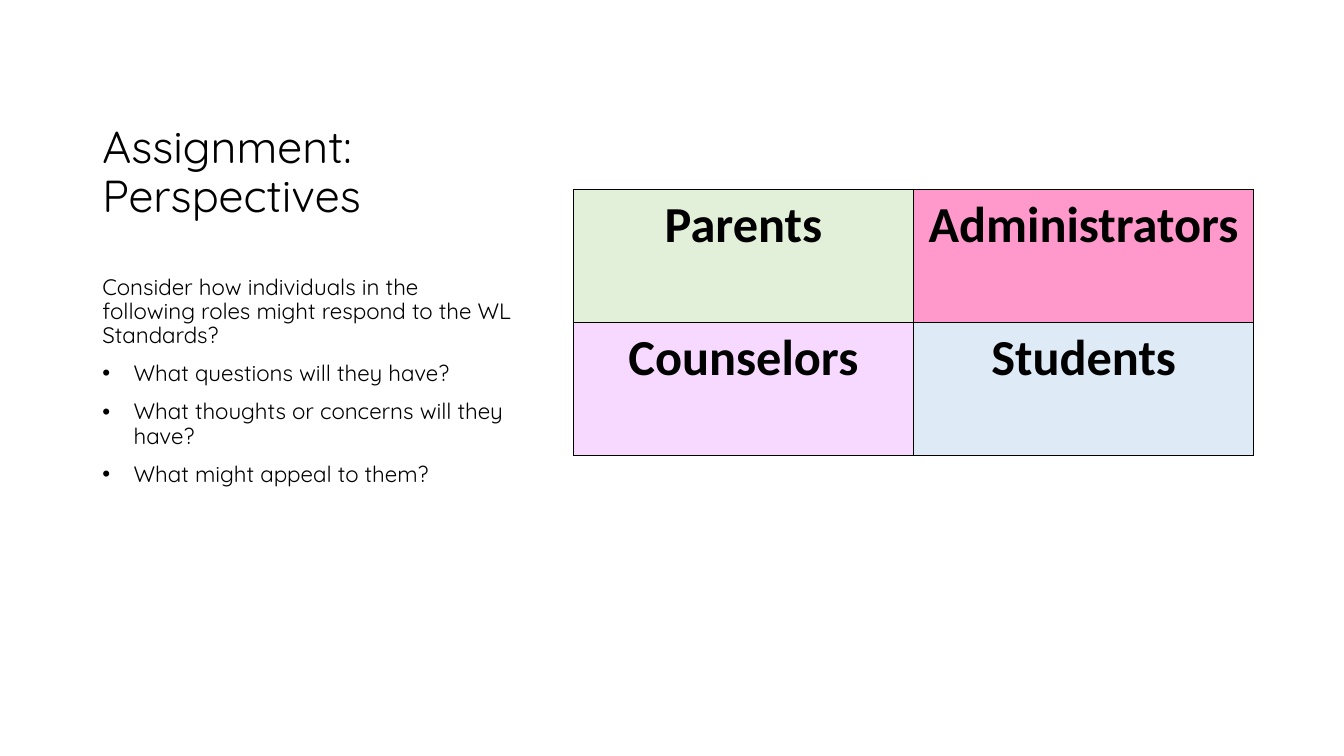
from lxml import etree
from pptx import Presentation
from pptx.dml.color import RGBColor
from pptx.enum.text import MSO_ANCHOR, PP_ALIGN
from pptx.oxml.ns import qn
from pptx.util import Cm, Pt

TOP = MSO_ANCHOR.TOP
BOTTOM = MSO_ANCHOR.BOTTOM
CENTER = PP_ALIGN.CENTER

LEFT_COLUMN = 2.33
LEFT_WIDTH = 10.92
INTRODUCTION = "Consider how individuals in the following roles might respond to the WL Standards?"
QUESTIONS = [
    "What questions will they have?",
    "What thoughts or concerns will they have?",
    "What might appeal to them?",
]
ROLES = [
    [("Parents", "E2F0D9"), ("Administrators", "FF99CC")],
    [("Counselors", "F7D9FF"), ("Students", "DEEBF7")],
]


def color(value):
    return RGBColor.from_string(value)


class SlideBuilder:
    text_font = "Quicksand"
    table_font = "Calibri"
    ink = "000000"
    line_spacing = 0.9
    bullet_indent = Cm(0.79)
    border_width = Pt(1)

    def __init__(self, page):
        self.page = page

    def style(self, para, font, size, bold=False):
        for span in para.runs:
            span.font.name = font
            span.font.size = Pt(size)
            span.font.bold = bold
            span.font.color.rgb = color(self.ink)

    def text(self, left, top, width, height, lines, size, anchor=TOP, space_before=0):
        box = self.page.shapes.add_textbox(Cm(left), Cm(top), Cm(width), Cm(height))
        frame = box.text_frame
        frame.word_wrap = True
        frame.vertical_anchor = anchor
        frame.text = "\n".join(lines)
        for para in frame.paragraphs:
            para.line_spacing = self.line_spacing
            para.space_before = Pt(space_before)
            self.style(para, self.text_font, size)
        return frame

    def bullet(self, para):
        properties = para._p.get_or_add_pPr()
        properties.set("marL", str(self.bullet_indent))
        properties.set("indent", str(-self.bullet_indent))
        etree.SubElement(properties, qn("a:buFont"), typeface="Arial")
        etree.SubElement(properties, qn("a:buChar"), char="•")

    def borders(self, cell):
        properties = cell._tc.get_or_add_tcPr()
        for position, side in enumerate(("a:lnL", "a:lnR", "a:lnT", "a:lnB")):
            line = etree.Element(qn(side), w=str(self.border_width))
            fill = etree.SubElement(line, qn("a:solidFill"))
            etree.SubElement(fill, qn("a:srgbClr"), val=self.ink)
            properties.insert(position, line)

    def table(self, left, top, width, height, rows, size):
        frame = self.page.shapes.add_table(
            len(rows), len(rows[0]), Cm(left), Cm(top), Cm(width), Cm(height)
        )
        for row_index, row in enumerate(rows):
            for column_index, (label, fill) in enumerate(row):
                cell = frame.table.cell(row_index, column_index)
                cell.text_frame.text = label
                cell.fill.solid()
                cell.fill.fore_color.rgb = color(fill)
                para = cell.text_frame.paragraphs[0]
                para.alignment = CENTER
                self.style(para, self.table_font, size, bold=True)
                self.borders(cell)


def main():
    deck = Presentation()
    deck.slide_width = Cm(33.87)
    deck.slide_height = Cm(19.05)
    builder = SlideBuilder(deck.slides.add_slide(deck.slide_layouts[6]))

    builder.text(LEFT_COLUMN, 1.27, LEFT_WIDTH, 4.45, ["Assignment: Perspectives"], 32, BOTTOM)
    builder.table(14.45, 4.78, 17.15, 6.7, ROLES, 36)
    body = builder.text(
        LEFT_COLUMN, 6.83, LEFT_WIDTH, 9.47, [INTRODUCTION, *QUESTIONS], 16, space_before=10
    )
    for para in body.paragraphs[1:]:
        builder.bullet(para)

    deck.save("out.pptx")


if __name__ == "__main__":
    main()
